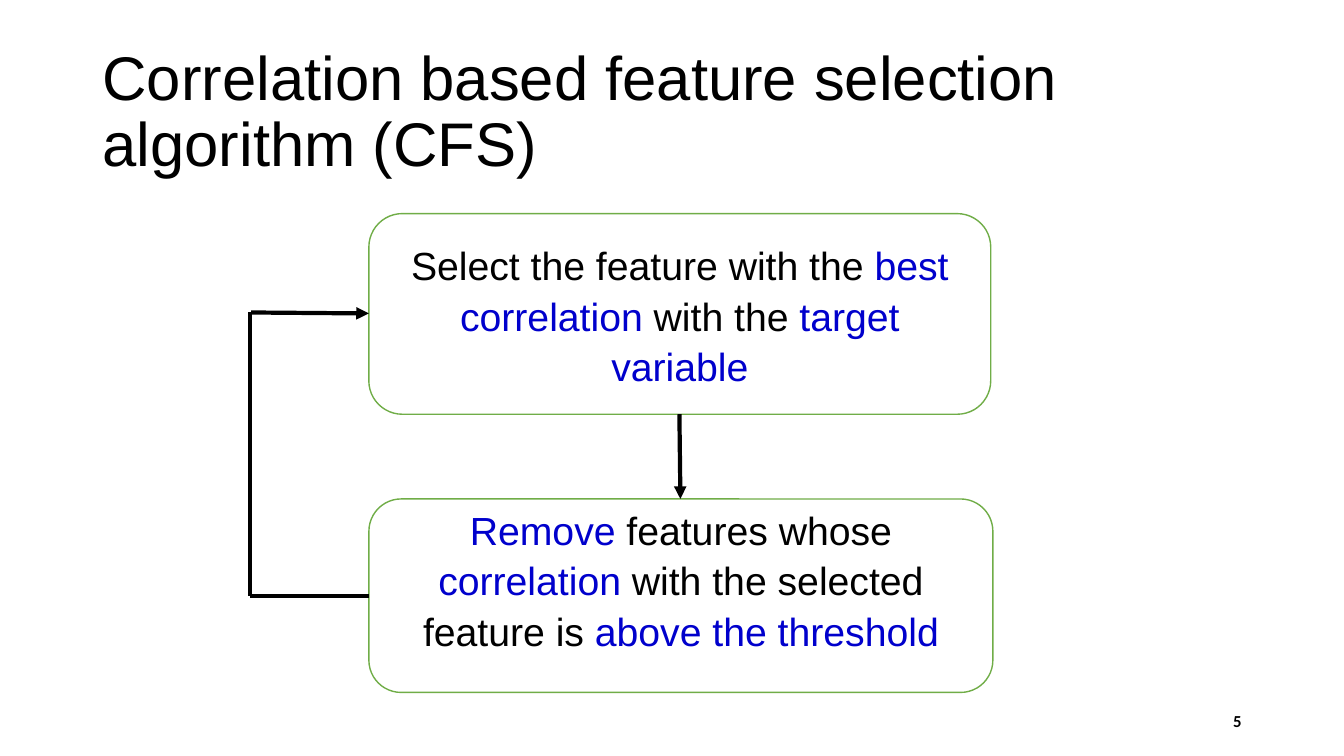
from dataclasses import dataclass

from lxml.etree import SubElement as Sub
from pptx import Presentation
from pptx.dml.color import RGBColor as RGB
from pptx.enum.shapes import MSO_CONNECTOR as Link, MSO_SHAPE as Kind
from pptx.enum.text import MSO_ANCHOR as Anchor, MSO_AUTO_SIZE as Fit, PP_ALIGN as Align
from pptx.oxml.ns import qn
from pptx.slide import Slide
from pptx.text.text import TextFrame
from pptx.util import Pt


@dataclass(frozen=True)
class Theme:
    ink: RGB = RGB(0x00, 0x00, 0x00)
    mark: RGB = RGB(0x00, 0x00, 0xCC)
    edge: RGB = RGB(0x70, 0xAD, 0x47)
    fill: RGB = RGB(0xFF, 0xFF, 0xFF)
    font: str = "Arial"
    note: str = "Calibri"
    head: float = 44
    body: float = 28
    small: float = 12


@dataclass(frozen=True)
class Run:
    text: str
    mark: bool = False


@dataclass(frozen=True)
class Step:
    top: float
    width: float
    height: float
    base: float
    runs: tuple[Run, ...]


@dataclass(frozen=True)
class Path:
    start: tuple[float, float]
    end: tuple[float, float]
    arrow: bool = False


THEME = Theme()
LEFT = 263.5
BACK = 178.6

STEPS = (
    Step(152.6, 444.2, 143.3, 3.6, (
        Run("Select the feature with the "),
        Run("best correlation", True),
        Run(" with the "),
        Run("target variable", True),
    )),
    Step(356.4, 445.7, 138.2, 28, (
        Run("Remove ", True),
        Run("features whose "),
        Run("correlation", True),
        Run(" with the selected feature is "),
        Run("above the threshold", True),
    )),
)

PATHS = (
    Path((485.3, 295.9), (486, 356.4), True),
    Path((LEFT, 425.5), (BACK, 425.5)),
    Path((BACK, 425.5), (BACK, 223.2)),
    Path((179.3, 223.2), (LEFT, 223.9), True),
)


def set_frame(frame: TextFrame) -> None:
    frame.word_wrap = True
    frame.auto_size = Fit.NONE
    frame.vertical_anchor = Anchor.MIDDLE


def add_title(slide: Slide, text: str) -> None:
    title = slide.shapes.title
    title.left, title.top = Pt(66), Pt(28.8)
    title.width, title.height = Pt(828), Pt(104.4)
    set_frame(title.text_frame)
    title.text_frame.text = text
    para = title.text_frame.paragraphs[0]
    para.alignment = Align.LEFT
    para.line_spacing = 0.9
    para.font.name = THEME.font
    para.font.size = Pt(THEME.head)
    para.font.color.rgb = THEME.ink


def add_count(slide: Slide, text: str) -> None:
    box = slide.shapes.add_textbox(Pt(678), Pt(500.5), Pt(216), Pt(28.8))
    set_frame(box.text_frame)
    box.text_frame.text = text
    para = box.text_frame.paragraphs[0]
    para.alignment = Align.RIGHT
    para.font.name = THEME.note
    para.font.size = Pt(THEME.small)
    para.font.bold = True
    para.font.color.rgb = THEME.ink


def add_step(slide: Slide, step: Step) -> None:
    box = slide.shapes.add_shape(
        Kind.ROUNDED_RECTANGLE, Pt(LEFT), Pt(step.top), Pt(step.width), Pt(step.height)
    )
    box.shadow.inherit = False
    box.fill.solid()
    box.fill.fore_color.rgb = THEME.fill
    box.line.color.rgb = THEME.edge
    box.line.width = Pt(1)
    set_frame(box.text_frame)
    box.text_frame.margin_bottom = Pt(step.base)
    para = box.text_frame.paragraphs[0]
    para.alignment = Align.CENTER
    para.line_spacing = 1.07
    para.space_after = Pt(8)
    para.font.name = THEME.font
    para.font.size = Pt(THEME.body)
    for part in step.runs:
        run = para.add_run()
        run.text = part.text
        run.font.color.rgb = THEME.mark if part.mark else THEME.ink


def add_path(slide: Slide, line: Path) -> None:
    (x, y), (u, v) = line.start, line.end
    link = slide.shapes.add_connector(Link.STRAIGHT, Pt(x), Pt(y), Pt(u), Pt(v))
    link.line.color.rgb = THEME.ink
    link.line.width = Pt(3)
    props = link.element.spPr
    if line.arrow:
        Sub(props.find(qn("a:ln")), qn("a:tailEnd"), type="triangle")
    Sub(props, qn("a:effectLst"))


def main() -> None:
    deck = Presentation()
    deck.slide_width, deck.slide_height = Pt(960), Pt(540)
    slide = deck.slides.add_slide(deck.slide_layouts[5])
    add_title(slide, "Correlation based feature selection algorithm (CFS)")
    add_count(slide, "5")
    for step in STEPS:
        add_step(slide, step)
    for line in PATHS:
        add_path(slide, line)
    deck.save("out.pptx")


if __name__ == "__main__":
    main()
